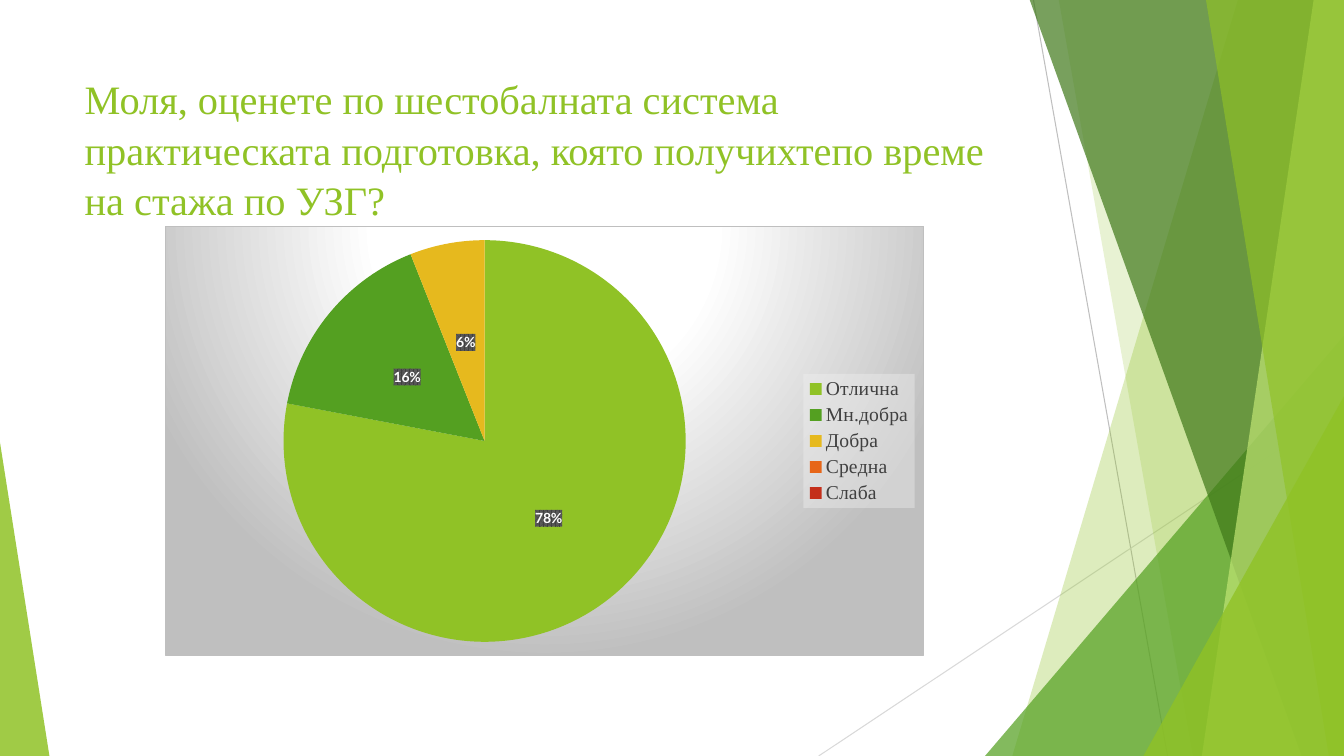
"""Build a survey slide with a pie chart beside a faceted green border."""
from dataclasses import dataclass

from pptx import Presentation, oxml, util as u
from pptx.chart import data
from pptx.dml import color
from pptx.enum import chart as ch, shapes, text
from pptx.oxml import ns

HUES = {"lime": "90C226", "green": "54A021", "gold": "E6B91E", "orange": "E76618",
        "red": "C42F1A", "moss": "3F7819", "pale": "C0E474", "white": "FFFFFF",
        "black": "000000", "ink": "404040", "slate": "595959", "gray": "BFBFBF",
        "mist": "D9D9D9", "fog": "F2F2F2"}
SERIF, SANS = "Times New Roman", "Lato"
TOP, BASE, EDGE = -0.01, 7.5, 13.33
RATES = {"Отлична": (78, "lime"), "Мн.добра": (16, "green"), "Добра": (6, "gold"),
         "Средна": (None, "orange"), "Слаба": (None, "red")}


@dataclass
class Ray:
    """A thin line between two points."""
    start: tuple[float, float]
    end: tuple[float, float]
    hue: str


@dataclass
class Facet:
    """A tinted band from the top to the base of the slide."""
    left: float
    right: float
    foot: float
    hue: str
    alpha: int


@dataclass
class Wedge:
    """A right triangle standing on the base of the slide."""
    left: float
    top: float
    width: float
    apex: int
    hue: str
    alpha: int


DECOR = [
    Ray((10.25, 0), (11.58, BASE), "gray"),
    Ray((EDGE, 4.03), (8.12, BASE), "mist"),
    Facet(12.28, EDGE, 10.04, "lime", 30),
    Facet(10.5, EDGE, 11.83, "lime", 20),
    Wedge(9.77, 3.33, 3.56, 1, "green", 72),
    Facet(10.21, EDGE, 12.91, "moss", 70),
    Facet(13.03, EDGE, 11.92, "pale", 70),
    Facet(11.96, EDGE, 13.18, "lime", 65),
    Wedge(11.34, 3.93, 1.99, 1, "lime", 80),
    Wedge(0, 4.39, 0.49, 0, "lime", 85),
]


def rgb(hue: str) -> color.RGBColor:
    """Return the named colour."""
    return color.RGBColor.from_string(HUES[hue])


def apply(item, form: dict) -> None:
    """Set each format value on the item."""
    for key, value in form.items():
        setattr(item, key, value)


def style(font, size: float, hue: str, name: str, bold: bool = False) -> None:
    """Format a font."""
    apply(font, {"size": u.Pt(size), "name": name, "bold": bold})
    font.color.rgb = rgb(hue)


def tint(shape, hue: str, alpha: int) -> None:
    """Give a shape a see-through fill and no line."""
    shape.shadow.inherit = False
    shape.fill.solid()
    shape.fill.fore_color.rgb = rgb(hue)
    shape.line.fill.background()
    shade = shape._element.spPr.find(".//" + ns.qn("a:srgbClr"))
    shade.append(oxml.parse_xml(f'<a:alpha {ns.nsdecls("a")} val="{alpha * 1000}"/>'))


def draw(slide, part: Ray | Facet | Wedge) -> None:
    """Draw one part of the border."""
    if isinstance(part, Ray):
        ends = [u.Inches(n) for n in part.start + part.end]
        line = slide.shapes.add_connector(shapes.MSO_CONNECTOR.STRAIGHT, *ends)
        line.line.color.rgb = rgb(part.hue)
        line.line.width = u.Pt(0.75)
        line._element.spPr.append(oxml.parse_xml(f'<a:effectLst {ns.nsdecls("a")}/>'))
        return
    if isinstance(part, Facet):
        spots = [(part.left, TOP), (part.right, TOP), (EDGE, BASE), (part.foot, BASE)]
        first, *rest = [(u.Inches(x), u.Inches(y)) for x, y in spots]
        pen = slide.shapes.build_freeform(*first)
        pen.add_line_segments(rest, close=True)
        shape = pen.convert_to_shape()
    else:
        box = (part.left, part.top, part.width, BASE - part.top)
        shape = slide.shapes.add_shape(shapes.MSO_SHAPE.ISOSCELES_TRIANGLE,
                                       *[u.Inches(n) for n in box])
        shape.adjustments[0] = part.apex
    tint(shape, part.hue, part.alpha)


def head(slide) -> None:
    """Place and format the title."""
    title = slide.shapes.title
    apply(title, {"left": u.Inches(0.74), "top": u.Inches(0.67),
                  "width": u.Inches(9.4), "height": u.Inches(1.44)})
    frame = title.text_frame
    frame.text = ("Моля, оценете по шестобалната система практическата подготовка, "
                  "която получихтепо време на стажа по УЗГ?")
    apply(frame, {"word_wrap": True, "vertical_anchor": text.MSO_ANCHOR.TOP,
                  "auto_size": text.MSO_AUTO_SIZE.NONE})
    line = frame.paragraphs[0]
    apply(line, {"alignment": text.PP_ALIGN.LEFT, "line_spacing": 1.04})
    style(line.runs[0].font, 28.8, "lime", SERIF)
    slide.shapes._spTree.append(title._element)


def panel(inner: str):
    """Return chart shape properties around the given XML."""
    return oxml.parse_xml(f'<c:spPr {ns.nsdecls("c", "a")}>{inner}</c:spPr>')


def tone(hue: str, inner: str = "") -> str:
    """Return the XML of a colour."""
    return f'<a:srgbClr val="{HUES[hue]}">{inner}</a:srgbClr>'


def plot(slide) -> None:
    """Add the pie chart."""
    info = data.CategoryChartData(number_format="General")
    info.categories = list(RATES)
    info.add_series("Series 1", [value for value, _ in RATES.values()])
    box = [u.Inches(n) for n in (1.64, 2.24, 7.52, 4.27)]
    chart = slide.shapes.add_chart(ch.XL_CHART_TYPE.PIE, *box, info).chart
    apply(chart, {"has_title": False, "has_legend": True})
    style(chart.font, 10, "black", SANS)
    stops = "".join(f'<a:gs pos="{at * 1000}">{tone(hue)}</a:gs>'
                    for at, hue in ((0, "white"), (39, "white"), (100, "gray")))
    back = panel(
        f'<a:gradFill><a:gsLst>{stops}</a:gsLst><a:path path="circle">'
        '<a:fillToRect l="50000" t="-80000" r="50000" b="180000"/></a:path></a:gradFill>'
        f'<a:ln w="9525"><a:solidFill>{tone("gray")}</a:solidFill></a:ln>')
    chart._chartSpace.find(ns.qn("c:chart")).addnext(back)

    legend = chart.legend
    apply(legend, {"position": ch.XL_LEGEND_POSITION.RIGHT, "include_in_layout": False})
    style(legend.font, 14, "ink", SERIF)
    veil = tone("fog", '<a:alpha val="39000"/>')
    legend._element.find(ns.qn("c:txPr")).addprevious(
        panel(f"<a:solidFill>{veil}</a:solidFill>"))

    pie = chart.plots[0]
    pie.vary_by_categories = True
    series = pie.series[0]
    for spot, (_, hue) in enumerate(RATES.values()):
        form = series.points[spot].format
        form.fill.solid()
        form.fill.fore_color.rgb = rgb(hue)
        form.line.fill.background()
    labels = series.data_labels
    apply(labels, {"show_percentage": True, "show_value": False, "number_format": "0%",
                   "number_format_is_linked": False,
                   "position": ch.XL_LABEL_POSITION.CENTER})
    style(labels.font, 10, "white", SANS, True)
    labels._element.find(ns.qn("c:txPr")).addprevious(panel(
        f'<a:pattFill prst="pct75"><a:fgClr>{tone("ink")}</a:fgClr>'
        f'<a:bgClr>{tone("slate")}</a:bgClr></a:pattFill>'))


def main() -> None:
    """Build and save the slide."""
    deck = Presentation()
    apply(deck, {"slide_width": u.Inches(EDGE), "slide_height": u.Inches(BASE)})
    slide = deck.slides.add_slide(deck.slide_layouts[5])
    for part in DECOR:
        draw(slide, part)
    head(slide)
    plot(slide)
    deck.save("out.pptx")


if __name__ == "__main__":
    main()
